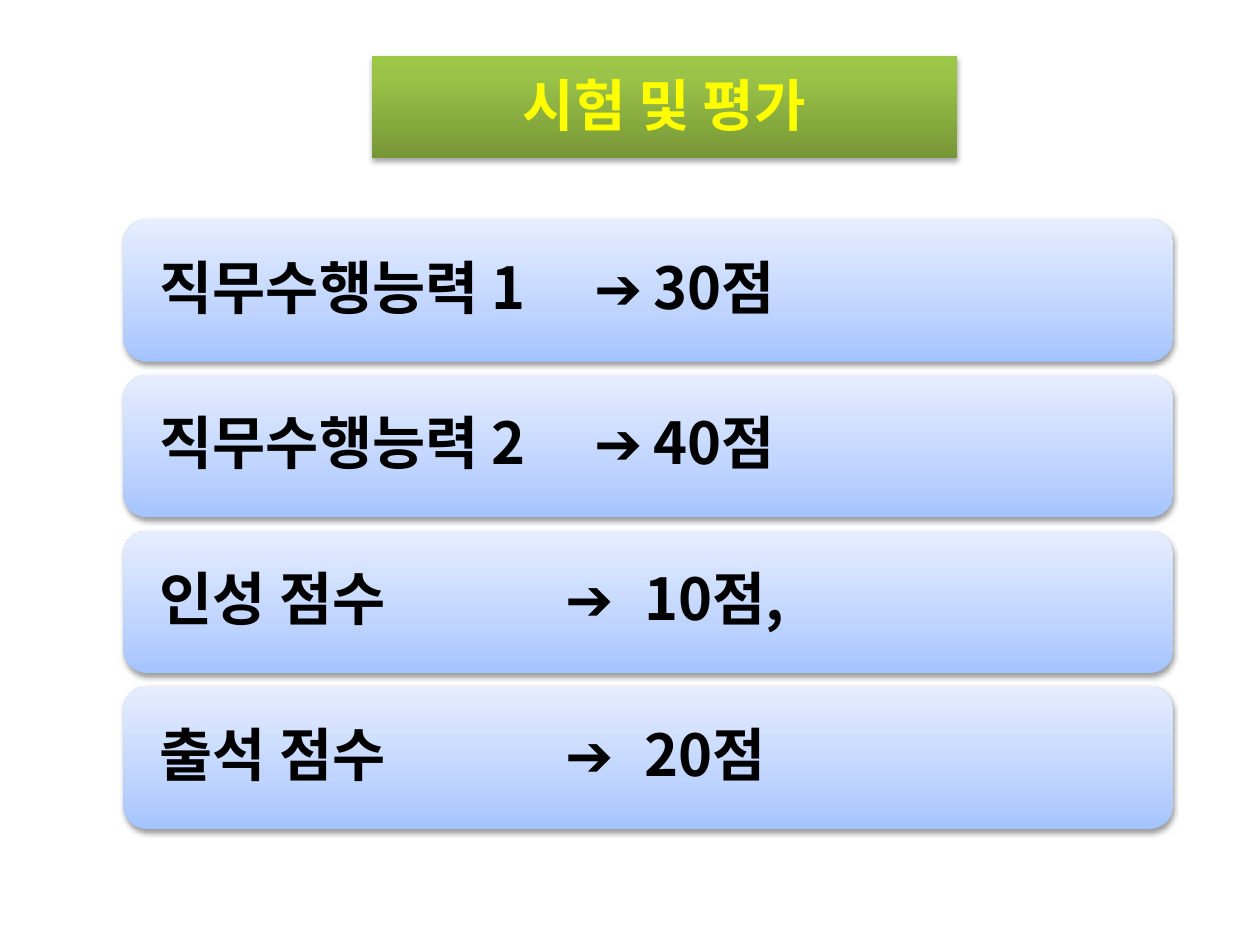
from lxml.etree import SubElement
from pptx import Presentation
from pptx.dml.color import RGBColor
from pptx.enum.shapes import MSO_SHAPE
from pptx.enum.text import MSO_ANCHOR, PP_ALIGN
from pptx.oxml.ns import qn
from pptx.util import Cm, Pt

FONT = "Noto Sans CJK KR"
TITLE_STOPS = [(0, "779737"), (80, "9BC348"), (100, "9DC746")]
ROW_STOPS = [(0, "A4C4FF"), (35, "BFD4FF"), (100, "E6EEFF")]
# Label, score, and the tab stops (cm) of the arrow and the score
ROWS = [
    ("직무수행능력 1", "30점", (8.76, 9.95)),
    ("직무수행능력 2", "40점", (8.76, 9.95)),
    ("인성 점수", "10점,", (8.18, 9.77)),
    ("출석 점수", "20점", (8.18, 9.77)),
]


def rgb(value):
    return RGBColor.from_string(value)


def fill_gradient(sp, stops):
    """Fill from bottom to top with (percent, colour) stops."""
    sp.fill.gradient()
    sp.fill.gradient_angle = 90
    gs_lst = sp.element.spPr.find(".//" + qn("a:gsLst"))
    for gs in list(gs_lst):
        gs_lst.remove(gs)
    for percent, color in stops:
        gs = SubElement(gs_lst, qn("a:gs"), pos=str(percent * 1000))
        SubElement(gs, qn("a:srgbClr"), val=color)


def add_shadow(sp, distance, opacity):
    sp.shadow.inherit = False
    effects = sp.element.spPr.find(qn("a:effectLst"))
    shadow = SubElement(effects, qn("a:outerShdw"), blurRad=str(Pt(3.1)),
                        dist=str(Pt(distance)), dir="5400000", rotWithShape="0")
    color = SubElement(shadow, qn("a:srgbClr"), val="000000")
    SubElement(color, qn("a:alpha"), val=str(opacity * 1000))


def add_panel(s, kind, box, stops, distance, opacity):
    sp = s.shapes.add_shape(kind, *[Cm(v) for v in box])
    fill_gradient(sp, stops)
    sp.line.fill.background()
    add_shadow(sp, distance, opacity)
    sp.text_frame.word_wrap = True
    sp.text_frame.vertical_anchor = MSO_ANCHOR.MIDDLE
    return sp


def add_run(p, text, size, color):
    r = p.add_run()
    r.text = text
    r.font.size = Pt(size)
    r.font.bold = True
    r.font.color.rgb = rgb(color)
    r.font.name = FONT
    SubElement(r.font._element, qn("a:ea"), typeface=FONT)


def add_title(s, text):
    sp = add_panel(s, MSO_SHAPE.RECTANGLE, (7.49, 1.12, 11.81, 2.06),
                   TITLE_STOPS, 1.8, 35)
    tf = sp.text_frame
    tf.margin_top, tf.margin_bottom = Cm(0.13), Cm(0.25)
    p = tf.paragraphs[0]
    p.alignment = PP_ALIGN.CENTER
    add_run(p, text, 32, "FFFF00")


def add_row(s, top, label, score, tabs):
    sp = add_panel(s, MSO_SHAPE.ROUNDED_RECTANGLE, (2.49, top, 21.16, 2.87),
                   ROW_STOPS, 1.6, 38)
    tf = sp.text_frame
    tf.margin_left = Cm(0.59)
    p = tf.paragraphs[0]
    tab_lst = SubElement(p._p.get_or_add_pPr(), qn("a:tabLst"))
    for tab in tabs:
        SubElement(tab_lst, qn("a:tab"), pos=str(Cm(tab)), algn="l")
    p.alignment = PP_ALIGN.LEFT
    p.line_spacing = 0.9
    add_run(p, f"{label}\t➔\t{score}", 33, "000000")


def main():
    prs = Presentation()
    prs.slide_width, prs.slide_height = Cm(25.4), Cm(19.05)
    s = prs.slides.add_slide(prs.slide_layouts[6])
    add_title(s, "시험 및 평가")
    for i, row in enumerate(ROWS):
        add_row(s, 4.42 + 3.14 * i, *row)
    prs.save("out.pptx")


if __name__ == "__main__":
    main()
